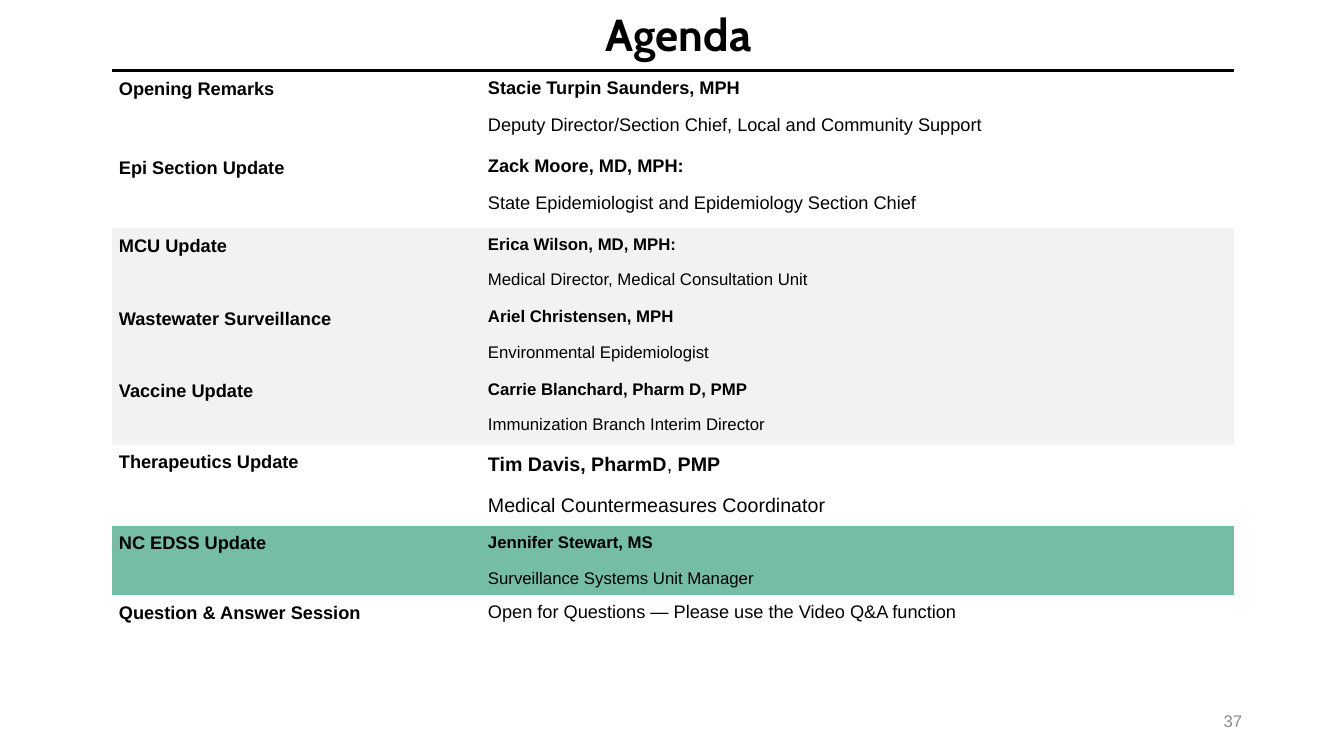
from dataclasses import dataclass

from lxml.etree import SubElement
from pptx import Presentation
from pptx.dml.color import RGBColor
from pptx.enum.text import MSO_ANCHOR as Anchor, PP_ALIGN as Align
from pptx.oxml import parse_xml
from pptx.oxml.ns import nsdecls, qn
from pptx.util import Inches, Length, Pt

BLACK = RGBColor(0x00, 0x00, 0x00)
PAGE_GREY = RGBColor(0x8C, 0x8C, 0x8C)
BAND_GREY = RGBColor(0xF2, 0xF2, 0xF2)
BAND_GREEN = RGBColor(0x75, 0xBD, 0xA7)

BODY_FONT = "Arial"
TITLE_FONT = "Cabin"
TOPIC_SIZE = 13
PLAIN_TABLE_STYLE = "{2D5ABB26-0587-4C30-8999-92F81FD0307C}"


def grid(units: float) -> Length:
    """Convert grid units, one hundredth of an inch each, to a length."""
    return Inches(units / 100)


@dataclass(frozen=True)
class AgendaItem:
    topic: str
    presenter: tuple[str, ...]  # spans alternate between bold and regular
    role: str
    rows: int
    size: int = TOPIC_SIZE
    fill: RGBColor | None = None
    topic_spacing: float = 1.07
    speaker_spacing: float = 1.0


@dataclass(frozen=True)
class Label:
    text: str
    left: int
    top: int
    width: int
    height: int
    font: str
    size: int
    color: RGBColor
    bold: bool
    align: Align
    anchor: Anchor
    wrap: bool


COLUMNS = (366, 747)
ITEMS = (
    AgendaItem("Opening Remarks", ("Stacie Turpin Saunders, MPH",),
               "Deputy Director/Section Chief, Local and Community Support", 78),
    AgendaItem("Epi Section Update", ("Zack Moore, MD, MPH:",),
               "State Epidemiologist and Epidemiology Section Chief", 78),
    AgendaItem("MCU Update", ("Erica Wilson, MD, MPH:",),
               "Medical Director, Medical Consultation Unit", 72, 12, BAND_GREY),
    AgendaItem("Wastewater Surveillance", ("Ariel Christensen, MPH",),
               "Environmental Epidemiologist", 72, 12, BAND_GREY),
    AgendaItem("Vaccine Update", ("Carrie Blanchard, Pharm D, PMP",),
               "Immunization Branch Interim Director", 72, 12, BAND_GREY),
    AgendaItem("Therapeutics Update", ("Tim Davis, PharmD", ", ", "PMP"),
               "Medical Countermeasures Coordinator", 80, 14,
               topic_spacing=1.0, speaker_spacing=1.07),
    AgendaItem("NC EDSS Update", ("Jennifer Stewart, MS",),
               "Surveillance Systems Unit Manager", 67, 12, BAND_GREEN,
               topic_spacing=1.0),
    AgendaItem("Question & Answer Session", (),
               "Open for Questions — Please use the Video Q&A function", 40),
)
LABELS = (
    Label("37", 942, 695, 300, 40, BODY_FONT, 12, PAGE_GREY, False,
          Align.RIGHT, Anchor.MIDDLE, True),
    Label("Agenda", 587, 2, 172, 64, TITLE_FONT, 32, BLACK, True,
          Align.CENTER, Anchor.TOP, False),
)


def style_span(span, font: str, size: int, color: RGBColor, bold: bool) -> None:
    span.font.name = font
    span.font.size = Pt(size)
    span.font.color.rgb = color
    span.font.bold = bold


def draw_label(page, label: Label) -> None:
    box = page.shapes.add_textbox(grid(label.left), grid(label.top),
                                  grid(label.width), grid(label.height))
    frame = box.text_frame
    frame.word_wrap = label.wrap
    frame.vertical_anchor = label.anchor
    frame.text = label.text
    para = frame.paragraphs[0]
    para.alignment = label.align
    style_span(para.runs[0], label.font, label.size, label.color, label.bold)


def fill_cell(cell, lines: list[tuple[tuple[str, ...], bool]], size: int,
              spacing: float, fill: RGBColor | None) -> None:
    """Write lines whose spans alternate in weight, starting as flagged."""
    cell.margin_left = cell.margin_right = grid(7)
    cell.margin_top = cell.margin_bottom = grid(7)
    if fill is None:
        cell.fill.background()
    else:
        cell.fill.solid()
        cell.fill.fore_color.rgb = fill
    for index, (spans, starts_bold) in enumerate(lines):
        frame = cell.text_frame
        para = frame.add_paragraph() if index else frame.paragraphs[0]
        para.line_spacing = spacing
        para.space_before = Pt(6 if index else 0)
        para.space_after = Pt(6)
        for position, text in enumerate(spans):
            span = para.add_run()
            span.text = text
            style_span(span, BODY_FONT, size, BLACK,
                       starts_bold == (position % 2 == 0))


def rule_above(cell, color: RGBColor, weight: float) -> None:
    line = parse_xml(f'<a:lnT {nsdecls("a")} w="{Pt(weight)}"/>')
    paint = SubElement(line, qn("a:solidFill"))
    SubElement(paint, qn("a:srgbClr")).set("val", str(color))
    cell._tc.get_or_add_tcPr().insert(0, line)


def draw_agenda(page, items: tuple[AgendaItem, ...]) -> None:
    frame = page.shapes.add_table(
        len(items), len(COLUMNS), grid(111), grid(70),
        grid(sum(COLUMNS)), grid(sum(item.rows for item in items)))
    table = frame.table
    table.first_row = table.horz_banding = False
    table._tbl.tblPr.find(qn("a:tableStyleId")).text = PLAIN_TABLE_STYLE
    for column, width in zip(table.columns, COLUMNS):
        column.width = grid(width)
    for row, item in zip(table.rows, items):
        row.height = grid(item.rows)
        topic, speaker = row.cells
        fill_cell(topic, [((item.topic,), True)], TOPIC_SIZE,
                  item.topic_spacing, item.fill)
        lines = [(item.presenter, True)] if item.presenter else []
        fill_cell(speaker, lines + [((item.role,), False)], item.size,
                  item.speaker_spacing, item.fill)
    for cell in table.rows[0].cells:
        rule_above(cell, BLACK, 2.25)


def main() -> None:
    deck = Presentation()
    deck.slide_width, deck.slide_height = grid(1333), grid(750)
    page = deck.slides.add_slide(deck.slide_layouts[6])
    # Agenda table
    draw_agenda(page, ITEMS)
    # Title and page number
    for label in LABELS:
        draw_label(page, label)
    deck.save("out.pptx")


if __name__ == "__main__":
    main()
